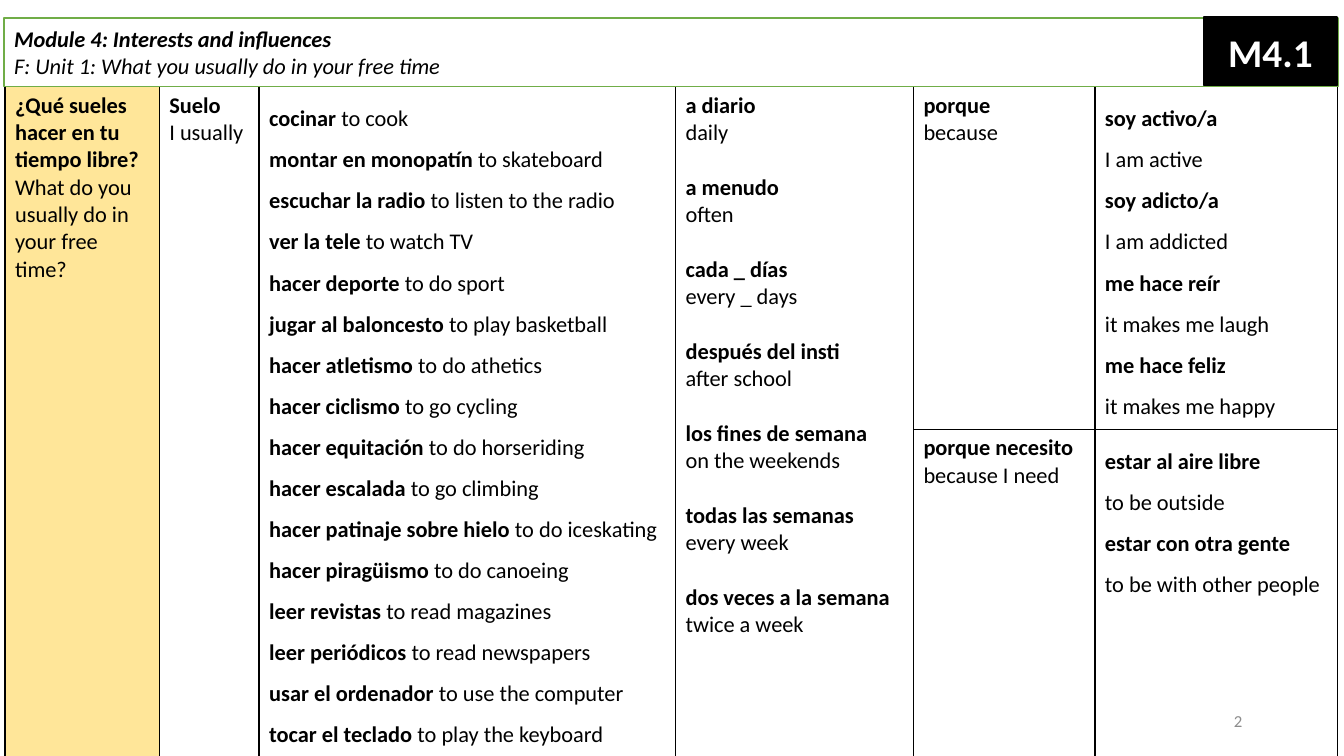
from lxml import etree
from pptx import Presentation
from pptx import util as u
from pptx.dml.color import RGBColor
from pptx.enum import shapes, text
from pptx.oxml import ns

# Content: (Spanish, English) pairs
MODULE = ("Module 4: Interests and influences",
          "F: Unit 1: What you usually do in your free time")
BADGE = "M4.1"
PAGE = "2"
QUESTION = [("¿Qué sueles hacer en tu tiempo libre?",
             "What do you usually do in your free time?")]
OPENER = [("Suelo", "I usually")]
ACTIVITIES = [
    ("cocinar", "to cook"),
    ("montar en monopatín", "to skateboard"),
    ("escuchar la radio", "to listen to the radio"),
    ("ver la tele", "to watch TV"),
    ("hacer deporte", "to do sport"),
    ("jugar al baloncesto", "to play basketball"),
    ("hacer atletismo", "to do athetics"),
    ("hacer ciclismo", "to go cycling"),
    ("hacer equitación", "to do horseriding"),
    ("hacer escalada", "to go climbing"),
    ("hacer patinaje sobre hielo", "to do iceskating"),
    ("hacer piragüismo", "to do canoeing"),
    ("leer revistas", "to read magazines"),
    ("leer periódicos", "to read newspapers"),
    ("usar el ordenador", "to use the computer"),
    ("tocar el teclado", "to play the keyboard"),
]
FREQUENCY = [
    ("a diario", "daily"),
    ("a menudo", "often"),
    ("cada _ días", "every _ days"),
    ("después del insti", "after school"),
    ("los fines de semana", "on the weekends"),
    ("todas las semanas", "every week"),
    ("dos veces a la semana", "twice a week"),
]
BECAUSE = [("porque", "because")]
REASONS = [
    ("soy activo/a", "I am active"),
    ("soy adicto/a", "I am addicted"),
    ("me hace reír", "it makes me laugh"),
    ("me hace feliz", "it makes me happy"),
]
NEED = [("porque necesito", "because I need")]
NEEDS = [
    ("estar al aire libre", "to be outside"),
    ("estar con otra gente", "to be with other people"),
]

# Format
COLORS = {"ink": "000000", "paper": "FFFFFF", "question": "FFE699",
          "header": "70AD47", "page": "8C8C8C"}
FONT = "Calibri"
COLUMNS = [1.53, 0.99, 4.13, 2.36, 1.8, 2.41]
ROWS = [3.4, 2.93]
# (row, column, pairs, rows spanned, text format)
CELLS = [
    (0, 0, QUESTION, 2, {}),
    (0, 1, OPENER, 2, {}),
    (0, 2, ACTIVITIES, 2, {"inline": True, "spacing": 1.5}),
    (0, 3, FREQUENCY, 2, {"gap": 19.5}),
    (0, 4, BECAUSE, 1, {}),
    (0, 5, REASONS, 1, {"spacing": 1.5}),
    (1, 4, NEED, 1, {}),
    (1, 5, NEEDS, 1, {"spacing": 1.5}),
]


def color(name):
    return RGBColor.from_string(COLORS[name])


def write(frame, pairs, size=16, ink="ink", italic=False, inline=False,
          spacing=1.0, gap=0, align=text.PP_ALIGN.LEFT):
    """Write pairs of bold and plain text, on one line or on two."""
    frame.word_wrap = True
    lines = []
    for index, (bold, plain) in enumerate(pairs):
        before = gap if index else 0
        if inline:
            lines.append((before, [(bold + " ", True), (plain, False)]))
        else:
            lines += [(before if is_bold else 0, [(words, is_bold)])
                      for words, is_bold in ((bold, True), (plain, False)) if words]
    for index, (before, runs) in enumerate(lines):
        paragraph = frame.add_paragraph() if index else frame.paragraphs[0]
        paragraph.alignment = align
        paragraph.line_spacing = spacing
        paragraph.space_before = u.Pt(before)
        for words, is_bold in runs:
            run = paragraph.add_run()
            run.text = words
            font = run.font
            font.name, font.size = FONT, u.Pt(size)
            font.bold, font.italic = is_bold, italic
            font.color.rgb = color(ink)


def place(shape, left, top, width, height):
    shape.left, shape.top = u.Inches(left), u.Inches(top)
    shape.width, shape.height = u.Inches(width), u.Inches(height)


def paint(shape, fill, line):
    shape.fill.solid()
    shape.fill.fore_color.rgb = color(fill)
    shape.line.color.rgb = color(line)
    shape.line.width = u.Pt(1)
    shape.shadow.inherit = False
    shape.text_frame.vertical_anchor = text.MSO_ANCHOR.MIDDLE


def add_borders(cell, widths):
    properties = cell._tc.get_or_add_tcPr()
    for index, (side, width) in enumerate(widths.items()):
        line = etree.Element(ns.qn("a:ln" + side), w=str(u.Pt(width)))
        fill = etree.SubElement(line, ns.qn("a:solidFill"))
        etree.SubElement(fill, ns.qn("a:srgbClr"), val=COLORS["ink"])
        properties.insert(index, line)


def add_phrase_table(slide):
    frame = slide.shapes.add_table(
        len(ROWS), len(COLUMNS), u.Inches(0.05), u.Inches(0.86),
        u.Inches(sum(COLUMNS)), u.Inches(sum(ROWS)))
    table = frame.table
    table.first_row = table.horz_banding = False
    for column, width in zip(table.columns, COLUMNS):
        column.width = u.Inches(width)
    for row, height in zip(table.rows, ROWS):
        row.height = u.Inches(height)

    # Fill and borders, with a thinner rule between the two reasons
    for row in range(len(ROWS)):
        for column in range(len(COLUMNS)):
            cell = table.cell(row, column)
            if column == 0:
                cell.fill.solid()
                cell.fill.fore_color.rgb = color("question")
            else:
                cell.fill.background()
            widths = dict.fromkeys("LRTB", 1)
            if column == 4:
                widths["T" if row else "B"] = 0.5
            add_borders(cell, widths)

    for row, column, pairs, span, style in CELLS:
        cell = table.cell(row, column)
        if span > 1:
            cell.merge(table.cell(row + span - 1, column))
        write(cell.text_frame, pairs, **style)
    return frame


def main():
    presentation = Presentation()
    presentation.slide_width = u.Inches(13.33)
    presentation.slide_height = u.Inches(7.5)
    slide = presentation.slides.add_slide(presentation.slide_layouts[5])

    # Phrase table, behind the header
    frame = add_phrase_table(slide)

    # Header
    title = slide.shapes.title
    frame.element.addnext(title.element)
    place(title, 0.04, 0.18, 13.23, 0.68)
    paint(title, "paper", "header")
    title.text_frame.auto_size = text.MSO_AUTO_SIZE.NONE
    write(title.text_frame, [MODULE], italic=True)

    # Module badge
    badge = slide.shapes.add_shape(shapes.MSO_SHAPE.RECTANGLE, 0, 0, 0, 0)
    place(badge, 11.94, 0.17, 1.32, 0.68)
    paint(badge, "ink", "ink")
    write(badge.text_frame, [(BADGE, "")], size=28, ink="paper",
          align=text.PP_ALIGN.CENTER)

    # Page number
    page = slide.shapes.add_textbox(0, 0, 0, 0)
    place(page, 9.42, 6.95, 3, 0.4)
    page.text_frame.vertical_anchor = text.MSO_ANCHOR.MIDDLE
    write(page.text_frame, [("", PAGE)], size=12, ink="page",
          align=text.PP_ALIGN.RIGHT)

    presentation.save("out.pptx")


if __name__ == "__main__":
    main()
